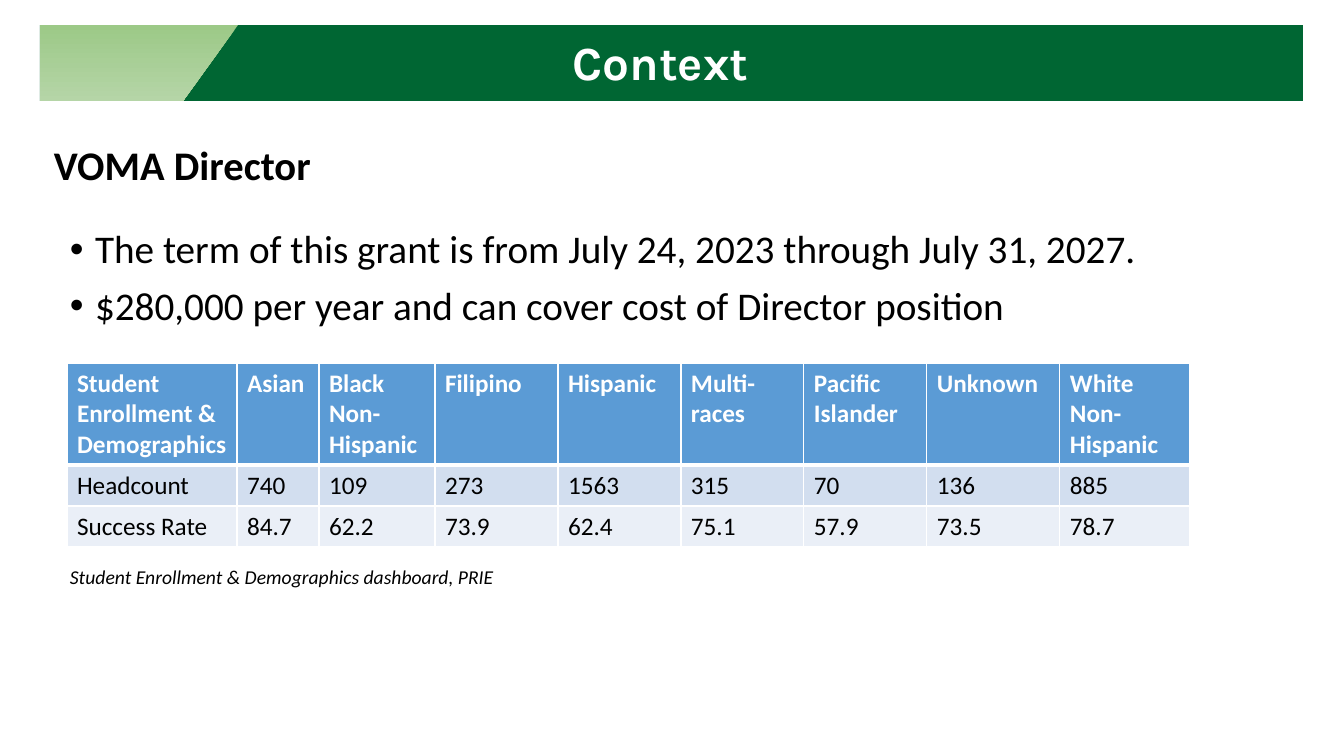
import pptx
import pptx.dml.color
import pptx.enum.text
import pptx.oxml
import pptx.util
from lxml import etree

PX = 914400 / 100.8
A = "http://schemas.openxmlformats.org/drawingml/2006/main"


def color(hex_string):
    return pptx.dml.color.RGBColor.from_string(hex_string)


def add_run(paragraph, text, size, hex_string="000000", font="Calibri", bold=False, italic=False):
    run = paragraph.add_run()
    run.text = text
    run.font.name = font
    run.font.size = pptx.util.Pt(size)
    run.font.bold = bold
    run.font.italic = italic
    run.font.color.rgb = color(hex_string)


deck = pptx.Presentation()
deck.slide_width, deck.slide_height = round(1344 * PX), round(756 * PX)
slide = deck.slides.add_slide(deck.slide_layouts[6])
shapes = slide.shapes

# Header band
band = shapes.add_shape(1, *[round(v * PX) for v in (40, 25, 1263, 76)])
band.shadow.inherit = False
band.fill.solid()
band.fill.fore_color.rgb = color("006633")
band.line.fill.background()

# Slanted corner of the band
outline = shapes.build_freeform(40, 25, scale=PX)
outline.add_line_segments([(238, 25), (183, 101), (40, 101)], close=True)
corner = outline.convert_to_shape()
corner.shadow.inherit = False
corner.fill.gradient()
corner.fill.gradient_angle = 270
for stop, shade in zip(corner.fill.gradient_stops, ("9CC987", "B5D5A7")):
    stop.color.rgb = color(shade)
corner.line.fill.background()

# Text boxes: place, anchor, alignment, bulleted, lines, size and run style
middle = pptx.enum.text.MSO_ANCHOR.MIDDLE
top = pptx.enum.text.MSO_ANCHOR.TOP
left, center = pptx.enum.text.PP_ALIGN.LEFT, pptx.enum.text.PP_ALIGN.CENTER
grant_facts = [
    "The term of this grant is from July 24, 2023 through July 31, 2027.",
    "$280,000 per year and can cover cost of Director position",
]
texts = [
    ((81, 36, 1159, 58), middle, center, False, ["Context"], 34,
     {"hex_string": "FFFFFF", "font": "Karla", "bold": True}),
    ((44, 94, 1159, 146), middle, left, False, ["VOMA Director"], 29, {"bold": True}),
    ((60, 225, 1217, 120), top, left, True, grant_facts, 28, {}),
    ((60, 563, 1217, 32), top, left, False,
     ["Student Enrollment & Demographics dashboard, PRIE"], 14, {"italic": True}),
]
for place, anchor, alignment, bulleted, lines, size, style in texts:
    frame = shapes.add_textbox(*[round(v * PX) for v in place]).text_frame
    frame.word_wrap = True
    frame.vertical_anchor = anchor
    for number, line in enumerate(lines):
        paragraph = frame.add_paragraph() if number else frame.paragraphs[0]
        paragraph.alignment = alignment
        paragraph.line_spacing = 0.9
        if bulleted:
            paragraph.space_before = pptx.util.Pt(10)
            properties = paragraph._p.get_or_add_pPr()
            properties.set("marL", "228600")
            properties.set("indent", "-228600")
            etree.SubElement(properties, f"{{{A}}}buFont", typeface="Arial")
            etree.SubElement(properties, f"{{{A}}}buChar", char="•")
        add_run(paragraph, line, size, **style)

# Enrollment table
enrollment = [
    ["Student Enrollment & Demographics", "Asian", "Black Non-Hispanic", "Filipino", "Hispanic",
     "Multi-races", "Pacific Islander", "Unknown", "White Non-Hispanic"],
    ["Headcount", "740", "109", "273", "1563", "315", "70", "136", "885"],
    ["Success Rate", "84.7", "62.2", "73.9", "62.4", "75.1", "57.9", "73.5", "78.7"],
]
column_widths = [170, 82, 116, 123, 123, 123, 123, 133, 130]
row_heights = [102, 41, 41]
row_fills = ["5B9BD5", "D2DEEF", "EAEFF7"]
table = shapes.add_table(
    len(row_heights), len(column_widths), round(67 * PX), round(363 * PX),
    round(sum(column_widths) * PX), round(sum(row_heights) * PX)).table
for column, width in zip(table.columns, column_widths):
    column.width = round(width * PX)
for r, (values, height) in enumerate(zip(enrollment, row_heights)):
    table.rows[r].height = round(height * PX)
    header = r == 0
    for c, value in enumerate(values):
        cell = table.cell(r, c)
        add_run(cell.text_frame.paragraphs[0], value, 18,
                "FFFFFF" if header else "000000", bold=header)
        # White borders, heavier around the header's lower edge
        weights = {"lnL": 1, "lnR": 1, "lnT": 3 if r == 1 else 1, "lnB": 3 if header else 1}
        for side, weight in weights.items():
            border = etree.SubElement(cell._tc.get_or_add_tcPr(), f"{{{A}}}{side}",
                                      w=str(weight * 12700))
            paint = etree.SubElement(border, f"{{{A}}}solidFill")
            etree.SubElement(paint, f"{{{A}}}srgbClr", val="FFFFFF")
        cell.fill.solid()
        cell.fill.fore_color.rgb = color(row_fills[r])

deck.save("out.pptx")
